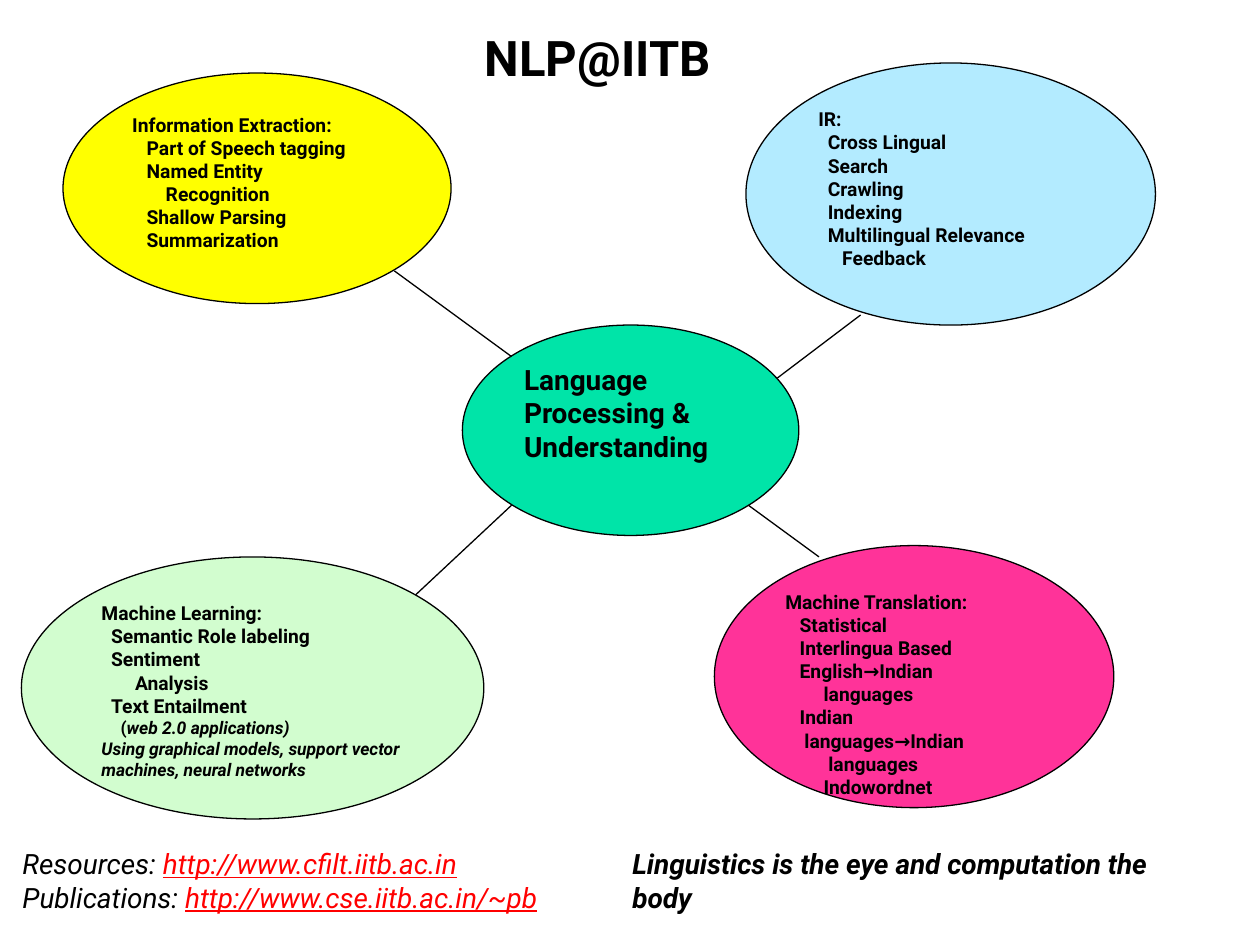
import pptx
import pptx.dml.color
import pptx.enum.shapes
import pptx.enum.text
import pptx.oxml
import pptx.util
from pptx.util import Inches

FONT = "Roboto"
BLACK = "000000"
RED = "FF0000"
SPACE_WIDTH = 0.038

TOPICS = [
    ((0.5, 0.58, 3.08, 1.83), "FFFF00", [
        (0, "Information Extraction:"),
        (3, "Part of Speech tagging"),
        (3, "Named Entity"),
        (7, "Recognition"),
        (3, "Shallow Parsing"),
        (3, "Summarization"),
    ]),
    ((0.17, 4.42, 3.67, 2.08), "D2FDCF", [
        (0, "Machine Learning:"),
        (2, "Semantic Role labeling"),
        (2, "Sentiment"),
        (7, "Analysis"),
        (2, "Text Entailment"),
    ]),
    ((5.92, 0.5, 3.25, 2.08), "B3EBFF", [
        (0, "IR:"),
        (2, "Cross Lingual"),
        (2, "Search"),
        (2, "Crawling"),
        (2, "Indexing"),
        (2, "Multilingual Relevance"),
        (5, "Feedback"),
    ]),
    ((5.67, 4.33, 3.17, 2.08), "FF3399", [
        (0, "Machine Translation:"),
        (3, "Statistical"),
        (3, "Interlingua Based"),
        (3, "English→Indian"),
        (8, "languages"),
        (3, "Indian"),
        (4, "languages→Indian"),
        (9, "languages"),
        (8, "Indowordnet"),
    ]),
]

LINKS = [
    (3.13, 2.15, 4.06, 2.83),
    (3.3, 4.72, 4.06, 4.01),
    (6.83, 2.5, 6.17, 3),
    (5.94, 4.01, 6.5, 4.42),
]

ADDRESSES = [
    ("Resources: ", "http://www.cfilt.iitb.ac.in"),
    ("Publications: ", "http://www.cse.iitb.ac.in/~pb"),
]


def color(value):
    return pptx.dml.color.RGBColor.from_string(value)


def add_run(para, text, size, bold=False, italic=False, ink=BLACK, underline=False):
    span = para.add_run()
    span.text = text
    span.font.name = FONT
    span.font.size = pptx.util.Pt(size)
    span.font.bold = bold
    span.font.italic = italic
    span.font.underline = underline
    span.font.color.rgb = color(ink)


def add_paragraph(frame, indent=0):
    first = frame.paragraphs[0]
    para = frame.add_paragraph() if first.runs else first
    para.alignment = pptx.enum.text.PP_ALIGN.LEFT
    if indent:
        properties = para._p.get_or_add_pPr()
        properties.set("marL", str(Inches(indent * SPACE_WIDTH)))
        properties.set("indent", "0")
    return para


def prepare_frame(shape):
    frame = shape.text_frame
    frame.word_wrap = True
    frame.vertical_anchor = pptx.enum.text.MSO_ANCHOR.TOP
    return frame


def add_ellipse(page, place, fill, lines, size):
    oval = page.shapes.add_shape(
        pptx.enum.shapes.MSO_SHAPE.OVAL, *map(Inches, place))
    oval.shadow.inherit = False
    oval.fill.solid()
    oval.fill.fore_color.rgb = color(fill)
    oval.line.color.rgb = color(BLACK)
    oval.line.width = pptx.util.Pt(0.75)
    frame = prepare_frame(oval)
    for indent, text in lines:
        add_run(add_paragraph(frame, indent), text, size, bold=True)
    return frame


def add_link(page, ends):
    link = page.shapes.add_connector(
        pptx.enum.shapes.MSO_CONNECTOR.STRAIGHT, *map(Inches, ends))
    link.line.color.rgb = color(BLACK)
    link.line.width = pptx.util.Pt(0.75)
    link._element.spPr.append(pptx.oxml.parse_xml(
        '<a:effectLst xmlns:a="http://schemas.openxmlformats.org/drawingml/2006/main"/>'))


def add_text_box(page, *place):
    return prepare_frame(page.shapes.add_textbox(*map(Inches, place)))


def add_learning_notes(frame):
    applications = add_paragraph(frame, 4)
    add_run(applications, "(", 10, bold=True)
    add_run(applications, "web 2.0 applications)", 10, bold=True, italic=True)
    add_run(add_paragraph(frame),
            "Using graphical models, support vector machines, neural networks",
            10, bold=True, italic=True)


def main():
    deck = pptx.Presentation()
    deck.slide_width = Inches(10)
    deck.slide_height = Inches(7.5)
    page = deck.slides.add_slide(deck.slide_layouts[6])

    add_ellipse(page, (3.67, 2.58, 2.67, 1.67), "00E4A8",
                [(0, "Language"), (0, "Processing & Understanding")], 16)
    topic_frames = [add_ellipse(page, *topic, 11) for topic in TOPICS]
    add_learning_notes(topic_frames[1])

    for ends in LINKS:
        add_link(page, ends)

    addresses = add_text_box(page, 0.08, 6.67, 4.52, 0.64)
    for label, address in ADDRESSES:
        para = add_paragraph(addresses)
        add_run(para, label, 16, italic=True)
        add_run(para, address, 16, italic=True, ink=RED, underline=True)

    motto = add_text_box(page, 4.92, 6.67, 4.98, 0.64)
    for text in ("Linguistics is the eye and computation the", "body"):
        add_run(add_paragraph(motto), text, 16, bold=True, italic=True)

    title = add_text_box(page, 3.75, 0.17, 2.24, 0.57)
    add_run(add_paragraph(title), "NLP@IITB", 28, bold=True)

    deck.save("out.pptx")


if __name__ == "__main__":
    main()
